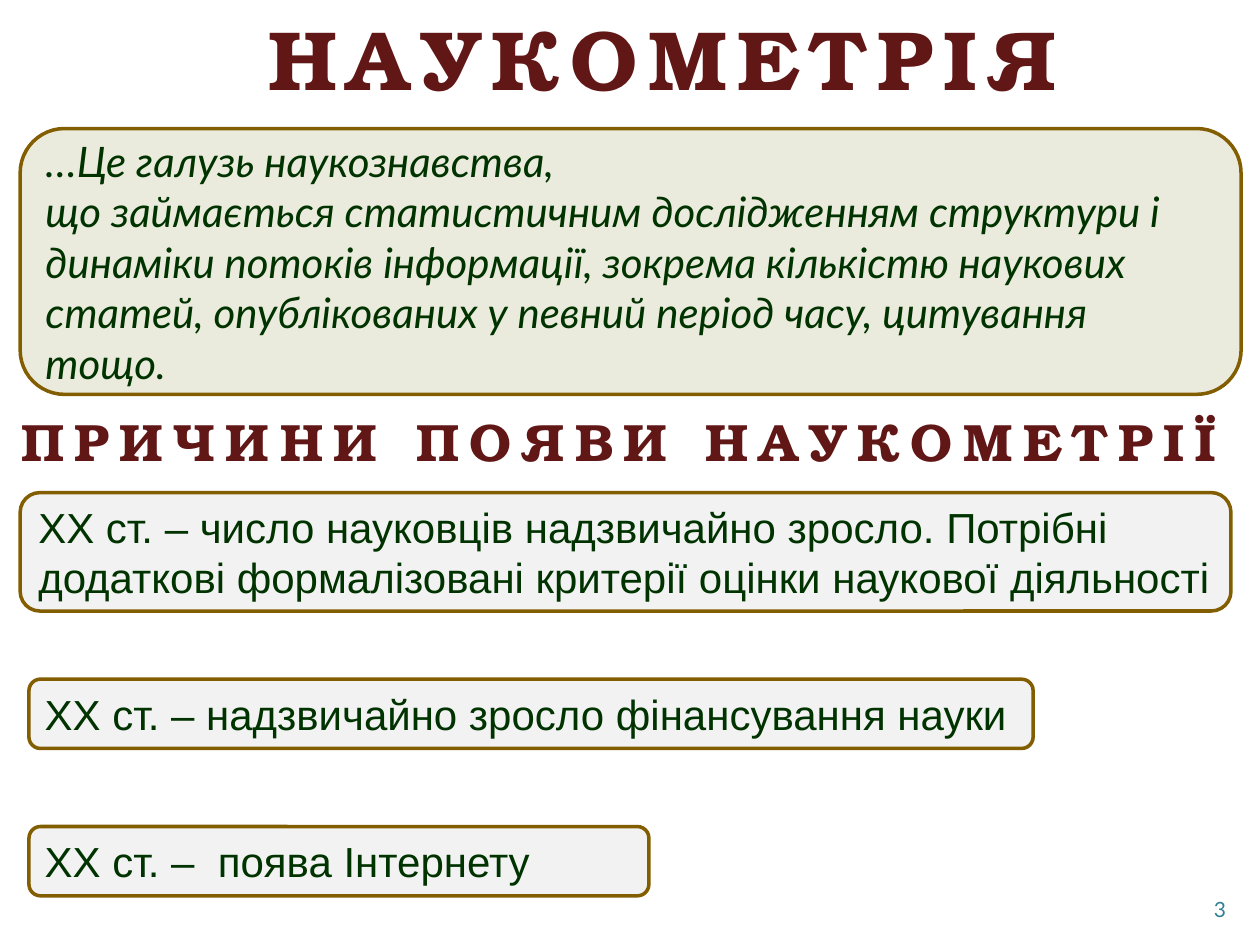
from pptx import Presentation
from pptx.dml.color import RGBColor
from pptx.enum.shapes import MSO_SHAPE
from pptx.enum.text import MSO_ANCHOR, PP_ALIGN
from pptx.util import Inches, Pt

MAROON = RGBColor(0x62, 0x17, 0x17)
DARK_GREEN = RGBColor(0x00, 0x33, 0x00)
BRONZE = RGBColor(0x83, 0x5E, 0x01)
BEIGE = RGBColor(0xEB, 0xEB, 0xDD)
LIGHT_GREY = RGBColor(0xF2, 0xF2, 0xF2)
TEAL = RGBColor(0x31, 0x80, 0x93)

HEADING_FONT = "TeX Gyre Bonum"
BODY_FONT = "Arial"
ACCENT_FONT = "Lato"

DEFINITION = [
    "…Це галузь наукознавства,",
    "що займається статистичним дослідженням структури і динаміки потоків "
    "інформації, зокрема кількістю наукових статей, опублікованих у певний "
    "період часу, цитування тощо.",
]
REASONS = [
    ((0.16, 3.91, 9.61, 0.94),
     "ХХ ст. – число науковців надзвичайно зросло. Потрібні додаткові "
     "формалізовані критерії оцінки наукової діяльності"),
    ((0.23, 5.39, 7.97, 0.55), "ХХ ст. – надзвичайно зросло фінансування науки"),
    ((0.23, 6.56, 4.92, 0.55), "ХХ ст. –  поява Інтернету"),
]


def format_text(text_frame, font_name, size, color, align=PP_ALIGN.LEFT):
    for paragraph in text_frame.paragraphs:
        paragraph.alignment = align
        for run in paragraph.runs:
            run.font.name = font_name
            run.font.size = Pt(size)
            run.font.color.rgb = color


def add_panel(slide, box, text, fill, font_name):
    """Add a bronze-edged rounded rectangle with left-aligned text."""
    shape = slide.shapes.add_shape(MSO_SHAPE.ROUNDED_RECTANGLE, *map(Inches, box))
    shape.shadow.inherit = False
    shape.fill.solid()
    shape.fill.fore_color.rgb = fill
    shape.line.color.rgb = BRONZE
    shape.line.width = Pt(2)
    text_frame = shape.text_frame
    text_frame.text = text
    text_frame.word_wrap = True
    text_frame.vertical_anchor = MSO_ANCHOR.MIDDLE
    format_text(text_frame, font_name, 24, DARK_GREEN)
    return shape


def add_heading(slide, box, text, size, align):
    """Add a bold heading with letters spaced six points apart."""
    text_frame = slide.shapes.add_textbox(*map(Inches, box)).text_frame
    text_frame.text = text
    text_frame.word_wrap = False
    format_text(text_frame, HEADING_FONT, size, MAROON, align)
    font = text_frame.paragraphs[0].runs[0].font
    font.bold = True
    font._element.set("spc", "600")


def add_definition(slide):
    panel = add_panel(slide, (0.16, 1.02, 9.69, 2.11), "\n".join(DEFINITION),
                      BEIGE, ACCENT_FONT)
    for paragraph in panel.text_frame.paragraphs:
        paragraph.runs[0].font.italic = True


def add_page_number(slide, number):
    box = slide.shapes.add_textbox(Inches(9), Inches(7.08), Inches(0.83), Inches(0.27))
    text_frame = box.text_frame
    text_frame.text = str(number)
    text_frame.word_wrap = True
    text_frame.vertical_anchor = MSO_ANCHOR.MIDDLE
    format_text(text_frame, ACCENT_FONT, 12, TEAL, PP_ALIGN.RIGHT)


def main():
    presentation = Presentation()
    presentation.slide_width = Inches(10)
    presentation.slide_height = Inches(7.5)
    slide = presentation.slides.add_slide(presentation.slide_layouts[6])

    add_heading(slide, (2.03, 0, 6.48, 0.91), "НАУКОМЕТРІЯ", 48, PP_ALIGN.LEFT)
    add_definition(slide)
    add_heading(slide, (0, 3.2, 9.84, 0.61), "ПРИЧИНИ ПОЯВИ НАУКОМЕТРІЇ", 30,
                PP_ALIGN.CENTER)
    for box, text in REASONS:
        add_panel(slide, box, text, LIGHT_GREY, BODY_FONT)
    add_page_number(slide, 3)

    presentation.save("out.pptx")


if __name__ == "__main__":
    main()
